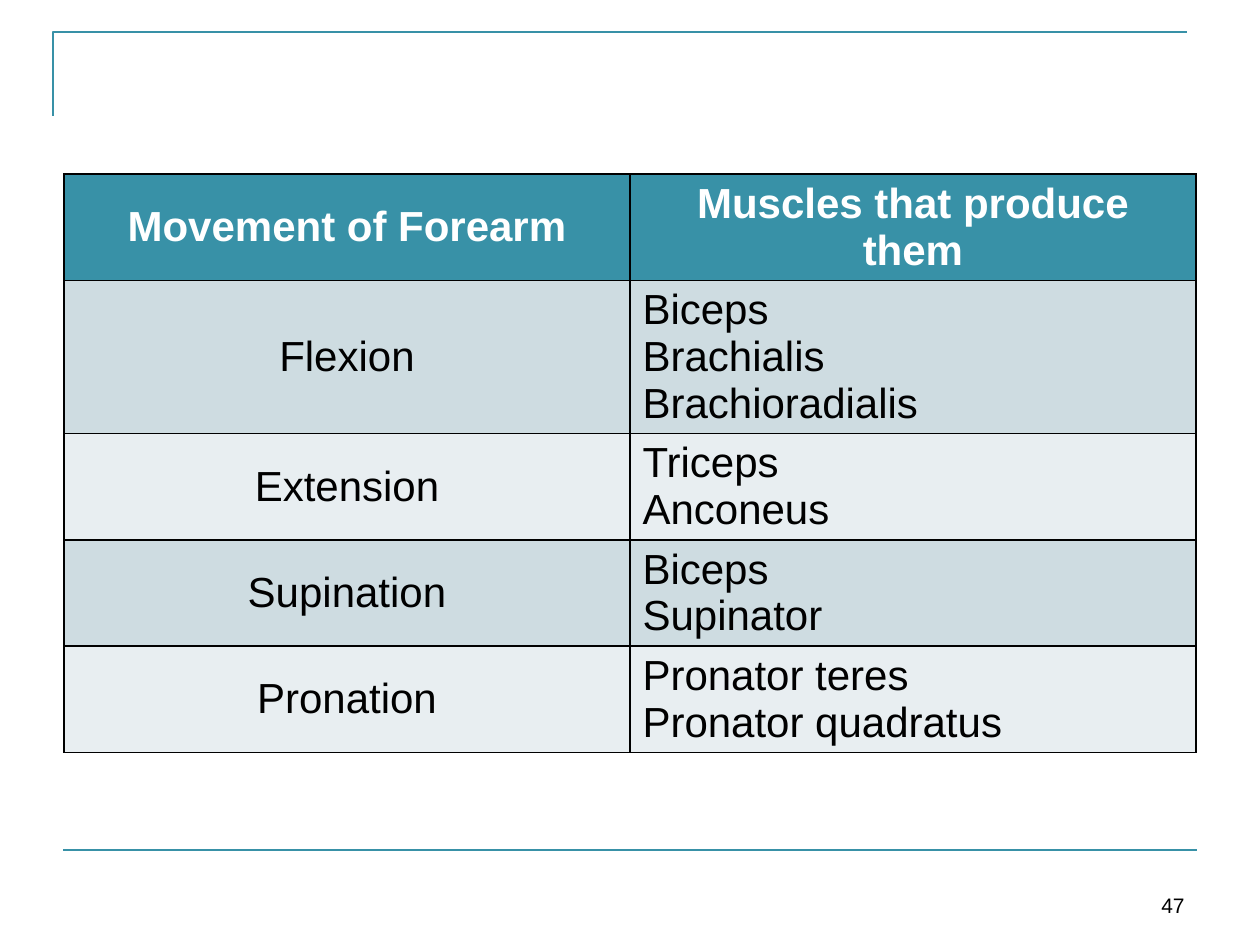
from dataclasses import dataclass

from lxml.etree import SubElement
from pptx import Presentation
from pptx.dml.color import RGBColor
from pptx.enum.shapes import MSO_CONNECTOR
from pptx.enum.text import MSO_ANCHOR, PP_ALIGN
from pptx.oxml.ns import qn
from pptx.util import Emu, Pt

EMU_PER_PX = 914400 / 126


def px(length):
    """Turn pixels into EMU."""
    return Emu(round(length * EMU_PER_PX))


@dataclass(frozen=True)
class Theme:
    """Colours, font and sizes of the slide."""

    accent: str = "3891A7"
    bands: tuple = ("CEDCE1", "E8EEF1")
    ink: str = "000000"
    paper: str = "FFFFFF"
    font: str = "Arial"
    table_size: int = 24
    number_size: int = 12
    rule_width: float = 1.5
    border_width: int = 1


class SlideBuilder:
    """Draws the elements of one slide in one theme."""

    def __init__(self, slide, theme):
        """Keep the slide and its theme."""
        self.slide = slide
        self.theme = theme

    def style_rule(self, line):
        """Give a decorative line the accent colour and width."""
        line.color.rgb = RGBColor.from_string(self.theme.accent)
        line.width = Pt(self.theme.rule_width)

    def corner(self, start, *points):
        """Draw an open outline through the points."""
        outline = self.slide.shapes.build_freeform(*start, scale=EMU_PER_PX)
        outline.add_line_segments(points, close=False)
        bracket = outline.convert_to_shape()
        bracket.shadow.inherit = False
        bracket.fill.background()
        self.style_rule(bracket.line)

    def rule(self, left, right, y):
        """Draw a horizontal line."""
        rule = self.slide.shapes.add_connector(
            MSO_CONNECTOR.STRAIGHT, px(left), px(y), px(right), px(y))
        self.style_rule(rule.line)
        SubElement(rule._element.spPr, qn("a:effectLst"))

    def add_lines(self, frame, lines, size, color, align, bold=False):
        """Add one paragraph for each line."""
        for index, text in enumerate(lines):
            paragraph = frame.add_paragraph() if index else frame.paragraphs[0]
            paragraph.alignment = align
            run = paragraph.add_run()
            run.text = text
            run.font.name = self.theme.font
            run.font.size = Pt(size)
            run.font.bold = bold
            run.font.color.rgb = RGBColor.from_string(color)

    def border(self, cell):
        """Draw a line on all four sides of a cell."""
        properties = cell._tc.get_or_add_tcPr()
        for side in ("lnL", "lnR", "lnT", "lnB"):
            line = SubElement(properties, qn(f"a:{side}"),
                              w=str(Pt(self.theme.border_width)))
            fill = SubElement(line, qn("a:solidFill"))
            SubElement(fill, qn("a:srgbClr"), val=self.theme.ink)

    def table(self, left, top, width, row_heights, rows):
        """Draw a table with a header row and banded body rows."""
        columns = len(rows[0])
        table = self.slide.shapes.add_table(
            len(rows), columns, px(left), px(top), px(width),
            px(sum(row_heights))).table
        for column in table.columns:
            column.width = px(width / columns)
        for r, (row, height) in enumerate(zip(rows, row_heights)):
            table.rows[r].height = px(height)
            header = r == 0
            band = self.theme.accent if header else self.theme.bands[(r - 1) % 2]
            color = self.theme.paper if header else self.theme.ink
            for c, lines in enumerate(row):
                cell = table.cell(r, c)
                cell.vertical_anchor = MSO_ANCHOR.MIDDLE
                self.border(cell)
                cell.fill.solid()
                cell.fill.fore_color.rgb = RGBColor.from_string(band)
                align = PP_ALIGN.CENTER if header or c == 0 else PP_ALIGN.LEFT
                self.add_lines(cell.text_frame, lines, self.theme.table_size,
                               color, align, header)

    def page_number(self, left, top, width, height, number):
        """Put the page number at the bottom right of its box."""
        frame = self.slide.shapes.add_textbox(
            px(left), px(top), px(width), px(height)).text_frame
        frame.word_wrap = True
        frame.vertical_anchor = MSO_ANCHOR.BOTTOM
        self.add_lines(frame, [number], self.theme.number_size, self.theme.ink,
                       PP_ALIGN.RIGHT)


MUSCLES = [
    (["Movement of Forearm"], ["Muscles that produce them"]),
    (["Flexion"], ["Biceps", "Brachialis", "Brachioradialis"]),
    (["Extension"], ["Triceps", "Anconeus"]),
    (["Supination"], ["Biceps", "Supinator"]),
    (["Pronation"], ["Pronator teres", "Pronator quadratus"]),
]


def main():
    """Build and save the slide."""
    presentation = Presentation()
    presentation.slide_width = px(1260)
    presentation.slide_height = px(945)
    blank_layout = presentation.slide_layouts[6]
    builder = SlideBuilder(presentation.slides.add_slide(blank_layout), Theme())
    builder.corner((53, 116), (53, 32), (1187, 32))
    builder.rule(63, 1197, 850)
    builder.table(64, 174, 1132, (106, 153, 106, 106, 106), MUSCLES)
    builder.page_number(903, 861, 294, 63, "47")
    presentation.save("out.pptx")


if __name__ == "__main__":
    main()
